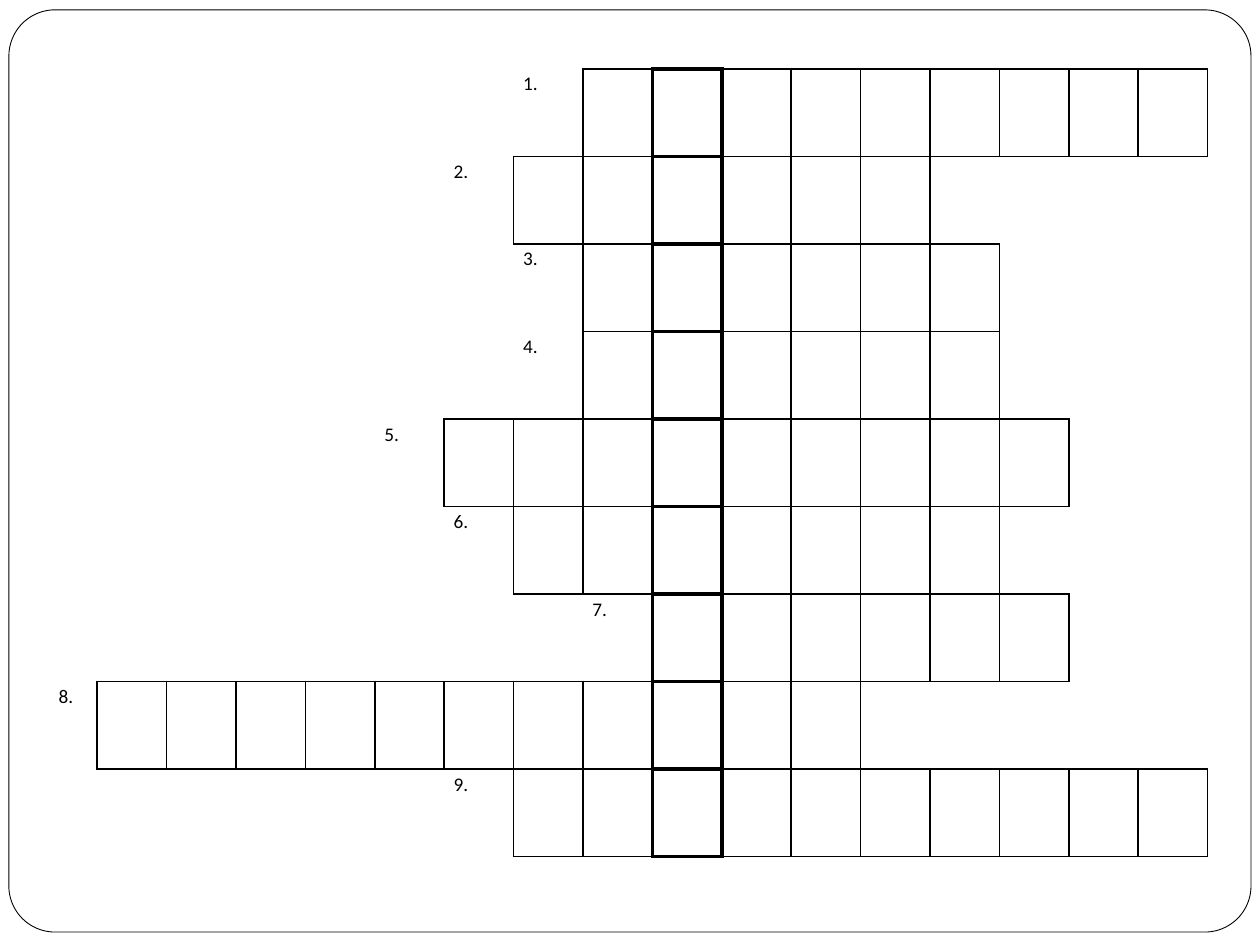
from lxml import etree
from pptx import Presentation
from pptx.dml.color import RGBColor
from pptx.enum import shapes
from pptx.oxml import ns
from pptx.util import Cm, Pt

# (label, first column, last column) of each answer
WORDS = [
    ("1.", 8, 16),
    ("2.", 7, 12),
    ("3.", 8, 13),
    ("4.", 8, 13),
    ("5.", 6, 14),
    ("6.", 7, 13),
    ("7.", 9, 14),
    ("8.", 1, 11),
    ("9.", 7, 16),
]
COLS, KEY = 17, 9  # the key column spells the solution
HUES = {"ink": "000000", "paper": "FFFFFF"}
FONT = "Calibri"
PLAIN = "{2D5ABB26-0587-4C30-8999-92F81FD0307C}"  # no style, no grid
SIDES = {"lnL": (0, -1), "lnR": (0, 1), "lnT": (-1, 0), "lnB": (1, 0)}
LEFT, TOP = 0.99, 1.39
FIRST, WIDE, HIGH = 0.97, 1.4, 1.764


def hue(name):
    return RGBColor.from_string(HUES[name])


def weight(row, col):
    """Border width in points that a square asks for."""
    if not 0 <= row < len(WORDS):
        return 0
    _, start, end = WORDS[row]
    if not start <= col <= end:
        return 0
    return 2.25 if col == KEY else 1


def rule(cell, row, col):
    """Draw each side as heavy as the heavier of the two squares it parts."""
    props = cell._tc.get_or_add_tcPr()
    for tag, (down, over) in SIDES.items():
        size = max(weight(row, col), weight(row + down, col + over))
        line = etree.SubElement(props, ns.qn("a:" + tag), w=str(Pt(size)))
        if size:
            fill = etree.SubElement(line, ns.qn("a:solidFill"))
            etree.SubElement(fill, ns.qn("a:srgbClr"), val=HUES["ink"])
        else:
            etree.SubElement(line, ns.qn("a:noFill"))


def label(cell, words):
    cell.margin_left = cell.margin_right = Cm(0.19)
    cell.margin_top = cell.margin_bottom = 0
    para = cell.text_frame.paragraphs[0]
    para.line_spacing = 1.15
    run = para.add_run()
    run.text = words
    run.font.size = Pt(11)
    run.font.name = FONT
    run.font.color.rgb = hue("ink")


def frame(slide):
    box = slide.shapes.add_shape(
        shapes.MSO_SHAPE.ROUNDED_RECTANGLE, Cm(0.18), Cm(0.2), Cm(25.04), Cm(18.59))
    box.adjustments[0] = 0.05
    box.shadow.inherit = False
    box.fill.solid()
    box.fill.fore_color.rgb = hue("paper")
    box.line.color.rgb = hue("ink")
    box.line.width = Pt(0.5)


def puzzle(slide):
    rows = len(WORDS)
    grid = slide.shapes.add_table(
        rows, COLS, Cm(LEFT), Cm(TOP),
        Cm(FIRST + WIDE * (COLS - 1)), Cm(HIGH * rows)).table
    grid.first_row = grid.horz_banding = False
    grid._tbl.tblPr.find(ns.qn("a:tableStyleId")).text = PLAIN
    for col, strip in enumerate(grid.columns):
        strip.width = Cm(WIDE if col else FIRST)
    for row, (mark, start, _) in enumerate(WORDS):
        grid.rows[row].height = Cm(HIGH)
        for col in range(COLS):
            cell = grid.cell(row, col)
            rule(cell, row, col)
            cell.fill.background()
        label(grid.cell(row, start - 1), mark)


def main():
    deck = Presentation()
    deck.slide_width, deck.slide_height = Cm(25.4), Cm(19.05)
    slide = deck.slides.add_slide(deck.slide_layouts[6])
    frame(slide)
    puzzle(slide)
    deck.save("out.pptx")


if __name__ == "__main__":
    main()
